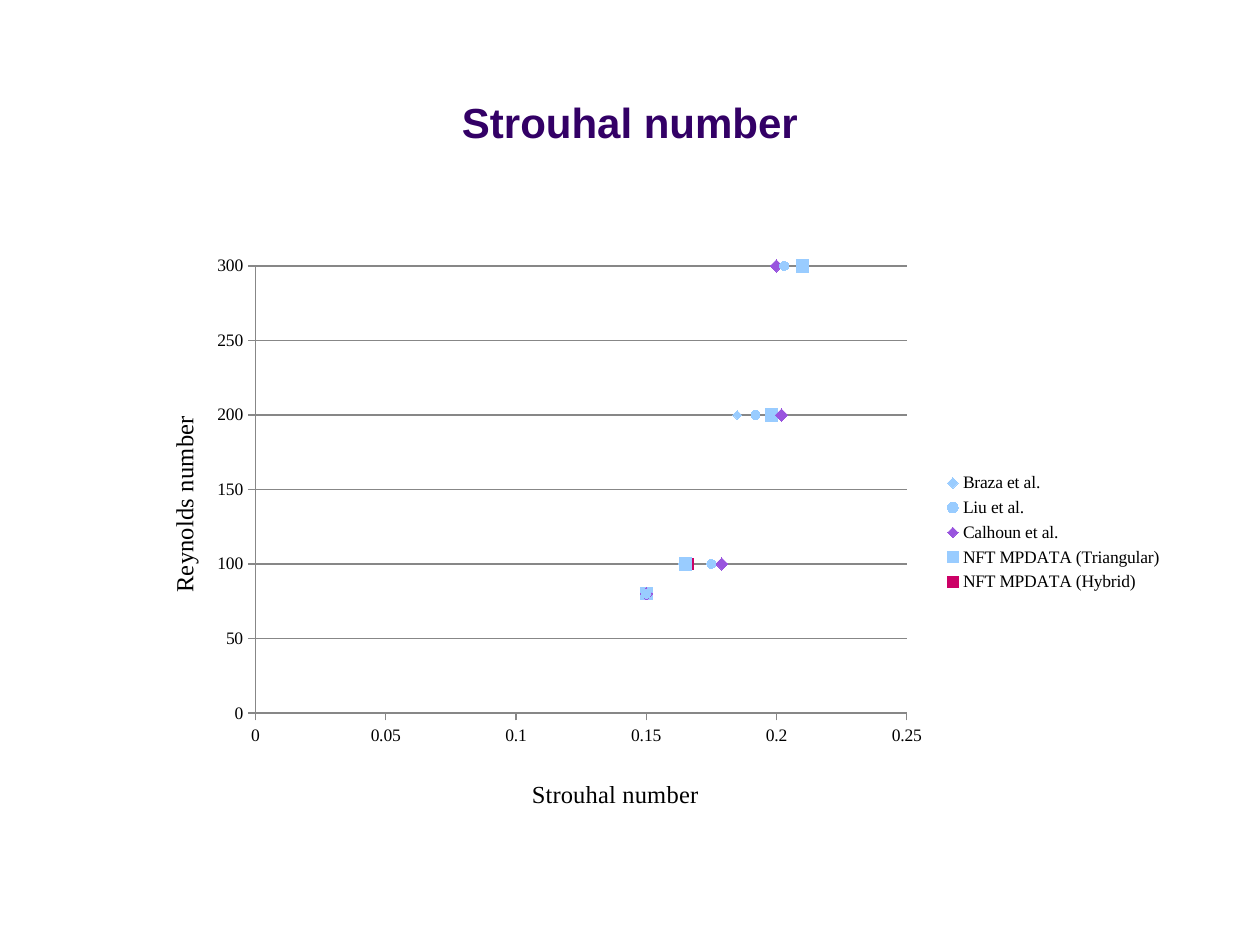
from lxml import etree
from pptx import Presentation, util as u
from pptx.chart.data import XyChartData
from pptx.dml.color import RGBColor
from pptx.enum import chart as ch, text as t
from pptx.oxml.ns import qn

# Content
TITLE = "Strouhal number"
X_TITLE, Y_TITLE = "Strouhal number", "Reynolds number"
REYNOLDS = [80, 100, 200, 300]
COLORS = {"title": "330066", "text": "000000", "grid": "878787",
          "sky": "99CCFF", "violet": "9954DE", "crimson": "CC0066"}
MARKERS = ch.XL_MARKER_STYLE
# name, Strouhal numbers, marker style, marker size, marker colour
SERIES = [
    ("Braza et al.", [0.15, 0.164, 0.185, 0.21], MARKERS.DIAMOND, 5, "sky"),
    ("Liu et al.", [0.15, 0.175, 0.192, 0.203], MARKERS.CIRCLE, 5, "sky"),
    ("Calhoun et al.", [0.15, 0.179, 0.202, 0.2], MARKERS.DIAMOND, 7, "violet"),
    ("NFT MPDATA (Triangular)", [0.15, 0.165, 0.198, 0.21], MARKERS.SQUARE, 7, "sky"),
    ("NFT MPDATA (Hybrid)", [0.15, 0.166, 0.198, 0.21], MARKERS.SQUARE, 6, "crimson"),
]
# Shares of the slide: left, top, width, height
TITLE_BOX = (0, 0.09, 1, 0.077)
CHART_BOX = (0.106, 0.259, 0.827, 0.609)
# Shares of the chart
PLOT_BOX = {"x": 0.117, "y": 0.037, "w": 0.625, "h": 0.777}
X_TITLE_AT = {"x": 0.378, "y": 0.92}
Y_TITLE_AT = {"x": 0.029, "y": 0.29}

presentation = Presentation()
presentation.slide_width, presentation.slide_height = u.Inches(10), u.Inches(7.5)
slide = presentation.slides.add_slide(presentation.slide_layouts[6])


def place(box):
    sides = (presentation.slide_width, presentation.slide_height) * 2
    return [int(share * side) for share, side in zip(box, sides)]


def color(name):
    return RGBColor.from_string(COLORS[name])


def write(frame, words, size=14, font="Times New Roman", fill="text", bold=False):
    paragraph = frame.paragraphs[0]
    paragraph.alignment = t.PP_ALIGN.CENTER
    run = paragraph.add_run()
    run.text = words
    run.font.size, run.font.name, run.font.bold = u.Pt(size), font, bold
    run.font.color.rgb = color(fill)


def set_layout(parent, index, shares, inner=False):
    for old in parent.findall(qn("c:layout")):
        parent.remove(old)
    layout = etree.Element(qn("c:layout"))
    manual = etree.SubElement(layout, qn("c:manualLayout"))
    values = [("layoutTarget", "inner")] if inner else []
    values += [("xMode", "edge"), ("yMode", "edge"), *shares.items()]
    for tag, value in values:
        etree.SubElement(manual, qn(f"c:{tag}")).set("val", str(value))
    parent.insert(index, layout)


# Heading
heading = slide.shapes.add_textbox(*place(TITLE_BOX)).text_frame
heading.word_wrap = True
heading.vertical_anchor = t.MSO_ANCHOR.MIDDLE
write(heading, TITLE, size=24, font="Arial", fill="title", bold=True)

# Scatter chart
data = XyChartData()
for name, strouhal, *_ in SERIES:
    points = data.add_series(name)
    for x, y in zip(strouhal, REYNOLDS):
        points.add_data_point(x, y)
chart = slide.shapes.add_chart(
    ch.XL_CHART_TYPE.XY_SCATTER, *place(CHART_BOX), data).chart
chart.has_title = False
chart.font.name, chart.font.size = "Times New Roman", u.Pt(10)
chart.font.color.rgb = color("text")
plot = chart.plots[0]
plot.vary_by_categories = False
for series, (_, _, style, size, fill) in zip(plot.series, SERIES):
    series.smooth = False
    series.format.line.fill.background()
    marker = series.marker
    marker.style, marker.size = style, size
    marker.format.fill.solid()
    marker.format.fill.fore_color.rgb = color(fill)
    marker.format.line.fill.background()

# Axes
for axis, words, top, step, spot in (
        (chart.category_axis, X_TITLE, 0.25, 0.05, X_TITLE_AT),
        (chart.value_axis, Y_TITLE, 300, 50, Y_TITLE_AT)):
    axis.minimum_scale, axis.maximum_scale, axis.major_unit = 0, top, step
    axis.major_tick_mark = ch.XL_TICK_MARK.OUTSIDE
    axis.minor_tick_mark = ch.XL_TICK_MARK.NONE
    axis.tick_labels.number_format = "General"
    axis.tick_labels.number_format_is_linked = False
    axis.has_major_gridlines = axis is not chart.category_axis and words == Y_TITLE
    lines = [axis.format.line]
    if axis.has_major_gridlines:
        lines.append(axis.major_gridlines.format.line)
    for line in lines:
        line.color.rgb, line.width = color("grid"), u.Pt(0.75)
    write(axis.axis_title.text_frame, words)
    axis_title = axis.axis_title._element
    set_layout(axis_title, 1, spot)

# Legend and plot area
chart.has_legend = True
chart.legend.position = ch.XL_LEGEND_POSITION.RIGHT
chart.legend.include_in_layout = False
chart.legend.font.name, chart.legend.font.size = "Times New Roman", u.Pt(10)
set_layout(chart._chartSpace.chart.plotArea, 0, PLOT_BOX, inner=True)

presentation.save("out.pptx")
